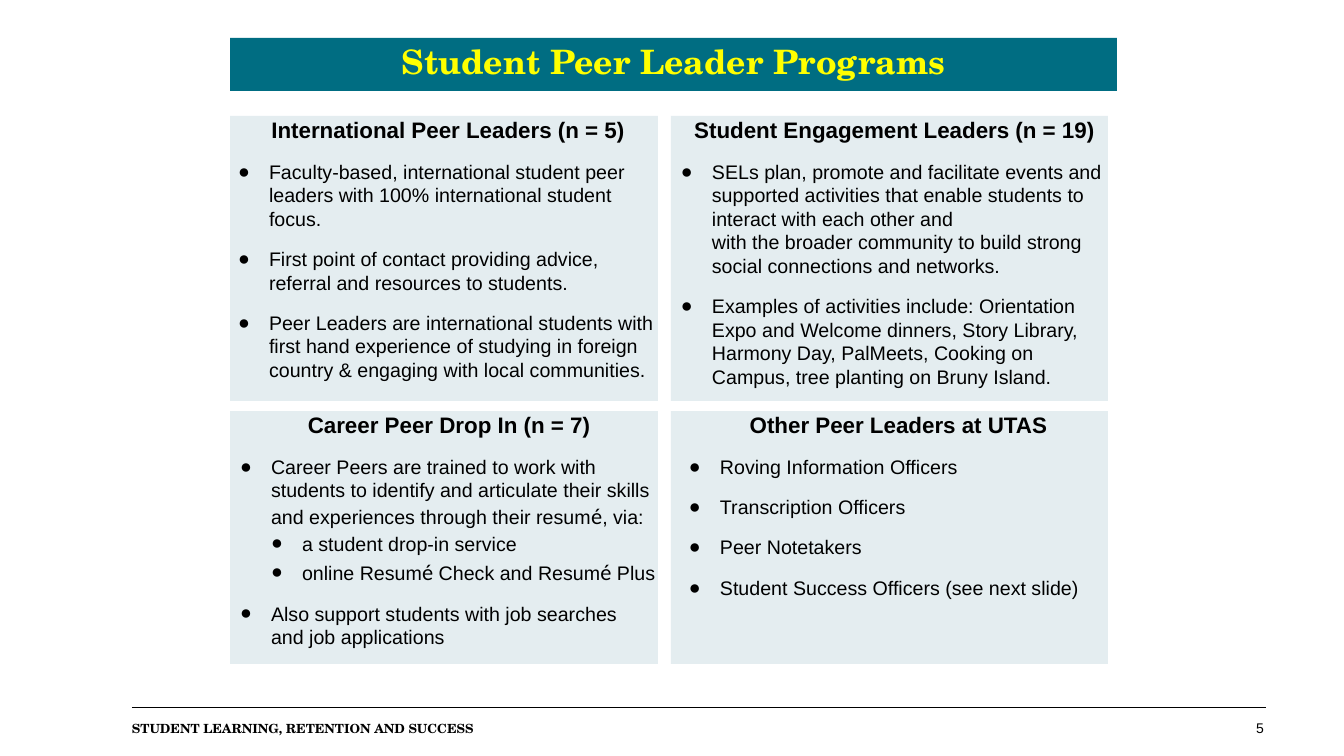
from itertools import groupby

from lxml.etree import SubElement
from pptx import Presentation
from pptx.dml.color import RGBColor
from pptx.enum.shapes import MSO_CONNECTOR, MSO_SHAPE
from pptx.enum.text import MSO_ANCHOR, PP_ALIGN
from pptx.oxml.ns import qn
from pptx.util import Emu, Pt

SCALE = 12192000 / 1344  # EMU in one px
HANG = 31
COLORS = {"teal": "006D82", "pale": "E4EDF0", "yellow": "FFFF00", "black": "000000"}

TITLE = {"name": "TeX Gyre Schola", "size": Pt(24), "bold": True, "color": "yellow"}
HEAD = {"name": "Arial", "size": Pt(16), "bold": True, "color": "black"}
BODY = {"name": "Arial", "size": Pt(14), "bold": False, "color": "black"}
ACCENT = {"name": "Calibri", "size": Pt(16), "bold": False, "color": "black"}
FOOT = {"name": "TeX Gyre Schola", "size": Pt(9), "bold": True, "color": "black"}
PAGE = {"name": "Arial", "size": Pt(10), "bold": False, "color": "black"}

COLS = ((230, 428), (671, 437))  # left, width
ROWS = ((116, 285), (411, 253))  # top, height

# Row by row: heading, heading indent, item indent, items as (level, text)
CARDS = (
    ("International Peer Leaders (n = 5)", (39, -HANG), 39, (
        (0, "Faculty-based, international student peer leaders with 100% international student focus."),
        (0, "First point of contact providing advice, referral and resources to students."),
        (0, "Peer Leaders are international students with first hand experience of studying "
            "in foreign country & engaging with local communities."))),
    ("Student Engagement Leaders (n = 19)", (10, 0), 41, (
        (0, "SELs plan, promote and facilitate events and supported activities that enable "
            "students to interact with each other and \nwith the broader community to build "
            "strong social connections and networks."),
        (0, "Examples of activities include: Orientation Expo and Welcome dinners, Story Library, "
            "Harmony Day, PalMeets, Cooking on Campus, tree planting on Bruny Island."))),
    ("Career Peer Drop In (n = 7)", (10, 0), 41, (
        (0, "Career Peers are trained to work with students to identify and articulate "
            "their skills and experiences through their resumé, via:"),
        (1, "a student drop-in service"),
        (1, "online Resumé Check and Resumé Plus"),
        (0, "Also support students with job searches \nand job applications"))),
    ("Other Peer Leaders at UTAS", (49, -HANG), 49, (
        (0, "Roving Information Officers"),
        (0, "Transcription Officers"),
        (0, "Peer Notetakers"),
        (0, "Student Success Officers (see next slide)"))),
)


def px(n):
    return Emu(round(n * SCALE))


def rgb(key):
    return RGBColor.from_string(COLORS[key])


def style(font, form):
    for key, val in form.items():
        if key == "color":
            font.color.rgb = rgb(val)
        else:
            setattr(font, key, val)


def write(para, text, form):
    """Add runs, with accented letters in their own font and \\n as a line break."""
    for n, line in enumerate(text.split("\n")):
        if n:
            para.add_line_break()
            SubElement(para._p[-1], qn("a:rPr"), sz=str(int(form["size"].pt * 100)))
        for accent, chars in groupby(line, lambda c: c == "é"):
            run = para.add_run()
            run.text = "".join(chars)
            style(run.font, ACCENT if accent else form)


def indent(para, left, first):
    props = para._p.get_or_add_pPr()
    props.set("marL", str(px(left)))
    props.set("indent", str(px(first)))
    return props


def bullet(para, left):
    props = indent(para, left, -HANG)
    SubElement(props, qn("a:buFont"), typeface="Arial")
    SubElement(props, qn("a:buChar"), char="●")


def setup(shape, anchor=MSO_ANCHOR.TOP):
    frame = shape.text_frame
    form = {"word_wrap": True, "vertical_anchor": anchor, "margin_left": 0,
            "margin_right": 0, "margin_top": 0, "margin_bottom": 0}
    for key, val in form.items():
        setattr(frame, key, val)
    return frame


def panel(slide, box, fill, anchor=MSO_ANCHOR.TOP):
    shape = slide.shapes.add_shape(MSO_SHAPE.RECTANGLE, *map(px, box))
    shape.shadow.inherit = False
    shape.fill.solid()
    shape.fill.fore_color.rgb = rgb(fill)
    shape.line.fill.background()
    return setup(shape, anchor)


def label(slide, box, text, form, align):
    para = setup(slide.shapes.add_textbox(*map(px, box))).paragraphs[0]
    para.alignment = align
    write(para, text, form)


def card(slide, box, head, shift, left, items):
    frame = panel(slide, box, "pale")
    para = frame.paragraphs[0]
    para.alignment = PP_ALIGN.CENTER
    indent(para, *shift)
    write(para, head, HEAD)
    for level, text in items:
        para = frame.add_paragraph()
        para.alignment = PP_ALIGN.LEFT
        para.level = level
        para.space_before = Pt(2 if level else 12)
        bullet(para, left + level * HANG)
        write(para, text, BODY)


def rule(slide, left, right, y):
    line = slide.shapes.add_connector(
        MSO_CONNECTOR.STRAIGHT, px(left), px(y), px(right), px(y))
    line.line.color.rgb = rgb("black")
    line.line.width = Pt(0.5)
    SubElement(line._element.spPr, qn("a:effectLst"))


def main():
    deck = Presentation()
    deck.slide_width, deck.slide_height = px(1344), px(756)
    slide = deck.slides.add_slide(deck.slide_layouts[6])

    # Title band
    para = panel(slide, (230, 38, 887, 53), "teal", MSO_ANCHOR.MIDDLE).paragraphs[0]
    para.alignment = PP_ALIGN.CENTER
    para.line_spacing = Pt(24)
    write(para, "Student Peer Leader Programs", TITLE)

    # Two by two cards
    for n, data in enumerate(CARDS):
        (top, high), (left, wide) = ROWS[n // 2], COLS[n % 2]
        card(slide, (left, top, wide, high), *data)

    # Footer
    rule(slide, 132, 1266, 707)
    label(slide, (132, 721, 1042, 21), "STUDENT LEARNING, RETENTION AND SUCCESS",
          FOOT, PP_ALIGN.LEFT)
    label(slide, (1212, 720, 52, 22), "5", PAGE, PP_ALIGN.RIGHT)

    deck.save("out.pptx")


if __name__ == "__main__":
    main()
